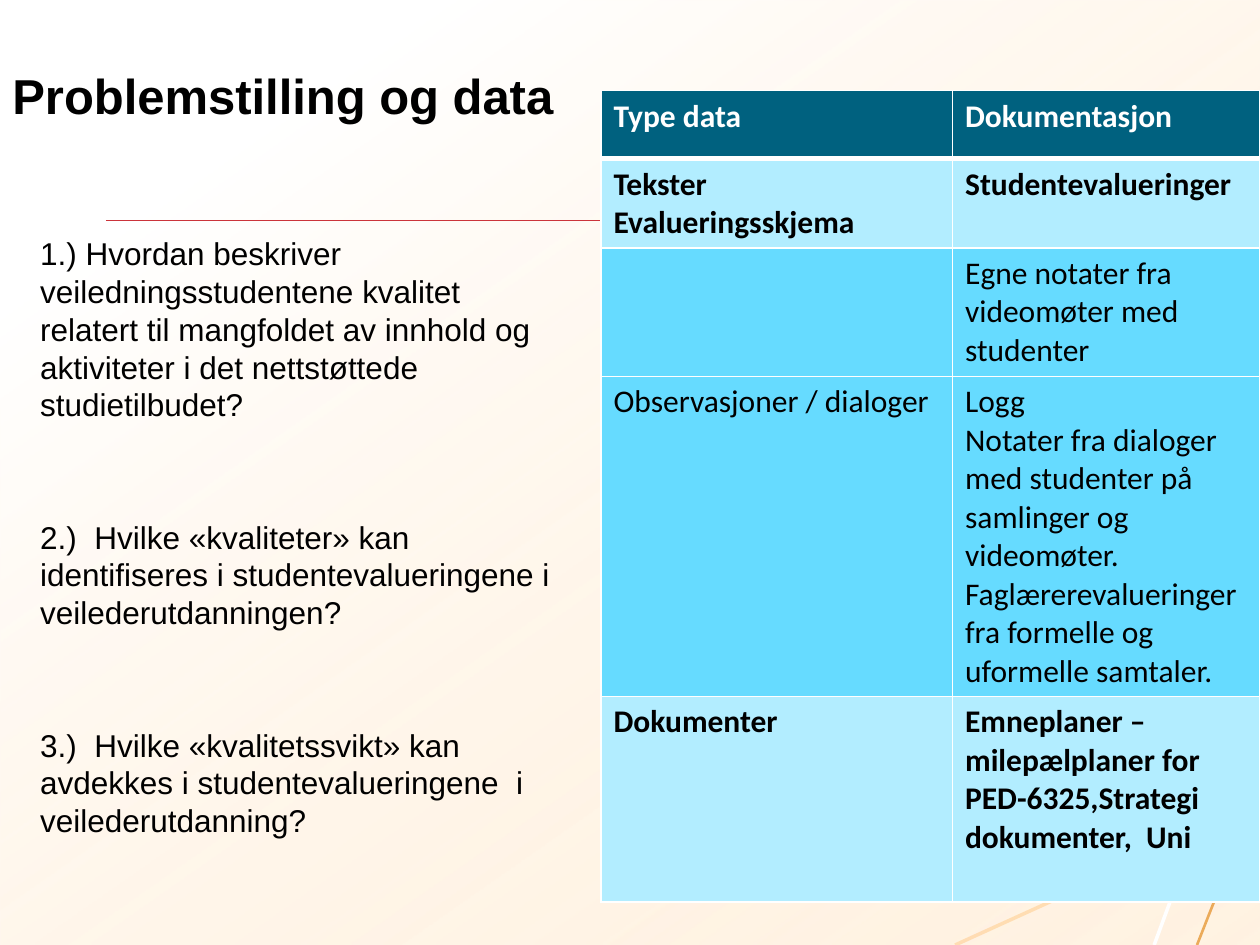
from lxml.etree import SubElement
from pptx import Presentation
from pptx.dml.color import RGBColor
from pptx.enum.shapes import MSO_CONNECTOR as Connector, MSO_SHAPE as Shape
from pptx.enum.text import MSO_ANCHOR as Anchor
from pptx.oxml import parse_xml
from pptx.oxml.ns import nsdecls, qn
from pptx.util import Inches, Pt

COLORS = {
    "white": "FFFFFF", "black": "000000", "cream": "FFE6C5", "peach": "FFCC8C",
    "orange": "DE7C00", "red": "CB343B", "header": "00617F",
    "light": "B2EDFF", "medium": "66DBFF",
}
COLUMNS, ROWS = 100, 75  # grid cells across and down the slide


def color(name):
    return RGBColor.from_string(COLORS[name])


def set_alpha(parent, percent):
    for element in parent.iter(qn("a:srgbClr")):
        SubElement(element, qn("a:alpha"), val=str(percent * 1000))


class SlideBuilder:
    text_size = 18
    body_font = "Arial"
    table_font = "Calibri"

    def __init__(self, presentation):
        self.width = presentation.slide_width
        self.height = presentation.slide_height
        self.slide = presentation.slides.add_slide(presentation.slide_layouts[6])
        self.shapes = self.slide.shapes

    def x(self, columns):
        return round(self.width * columns / COLUMNS)

    def y(self, rows):
        return round(self.height * rows / ROWS)

    def box(self, left, top, width, height):
        return self.x(left), self.y(top), self.x(width), self.y(height)

    def format_runs(self, paragraph, font_name, font_color, size, bold=False):
        for run in paragraph.runs:
            font = run.font
            font.name, font.size, font.bold = font_name, Pt(size), bold
            font.color.rgb = color(font_color)

    def background(self, start, end, end_alpha, angle):
        shape = self.shapes.add_shape(Shape.RECTANGLE, 0, 0, self.width, self.height)
        shape.shadow.inherit = False
        shape.line.fill.background()
        shape.fill.gradient()
        shape.fill.gradient_angle = 360 - angle
        for stop, (name, position) in zip(shape.fill.gradient_stops, (start, end)):
            stop.color.rgb = color(name)
            stop.position = position
        set_alpha(shape.element.spPr.findall(".//" + qn("a:gs"))[-1], end_alpha)

    def line(self, start, end, name, width, alpha=None):
        connector = self.shapes.add_connector(
            Connector.STRAIGHT, self.x(start[0]), self.y(start[1]),
            self.x(end[0]), self.y(end[1]))
        connector.line.color.rgb = color(name)
        connector.line.width = Pt(width)
        properties = connector.element.spPr
        if alpha:
            set_alpha(properties, alpha)
        SubElement(properties, qn("a:effectLst"))

    def text(self, area, paragraphs, size=text_size, bold=False,
             anchor=Anchor.TOP, gap=0, right_margin=1):
        frame = self.shapes.add_textbox(*self.box(*area)).text_frame
        frame.word_wrap = True
        frame.vertical_anchor = anchor
        frame.margin_right = self.x(right_margin)
        frame.text = "\n".join(paragraphs)
        for index, paragraph in enumerate(frame.paragraphs):
            paragraph.space_before = Pt(gap if index else 0)
            self.format_runs(paragraph, self.body_font, "black", size, bold)

    def borders(self, cell, top=1, bottom=1):
        properties = cell._tc.get_or_add_tcPr()
        widths = {"lnL": 1, "lnR": 1, "lnT": top, "lnB": bottom}
        for index, (tag, width) in enumerate(widths.items()):
            properties.insert(index, parse_xml(
                f'<a:{tag} {nsdecls("a")} w="{Pt(width)}"><a:solidFill>'
                f'<a:srgbClr val="{COLORS["white"]}"/></a:solidFill></a:{tag}>'))

    def table(self, left, top, column_widths, rows):
        area = self.box(left, top, sum(column_widths), sum(row[0] for row in rows))
        table = self.shapes.add_table(len(rows), len(column_widths), *area).table
        table.horz_banding = False
        for column, width in zip(table.columns, column_widths):
            column.width = self.x(width)
        for index, (height, fill, font_color, bold, texts) in enumerate(rows):
            table.rows[index].height = self.y(height)
            for cell, content in zip(table.rows[index].cells, texts):
                cell.fill.solid()
                cell.fill.fore_color.rgb = color(fill)
                self.borders(cell, top=3 if index == 1 else 1,
                             bottom=3 if index == 0 else 1)
                cell.text = content
                for paragraph in cell.text_frame.paragraphs:
                    self.format_runs(paragraph, self.table_font, font_color,
                                     self.text_size, bold)


QUESTIONS = [
    "1.) Hvordan beskriver veiledningsstudentene kvalitet relatert til mangfoldet "
    "av innhold og aktiviteter i det nettstøttede studietilbudet?",
    "2.)  Hvilke «kvaliteter» kan identifiseres i studentevalueringene i "
    "veilederutdanningen?",
    "3.)  Hvilke «kvalitetssvikt» kan avdekkes i studentevalueringene  i "
    "veilederutdanning?",
]

# Row height, fill, text colour, bold, cell texts
DATA_ROWS = [
    (5.4, "header", "white", True, ("Type data", "Dokumentasjon")),
    (7.1, "light", "black", True,
     ("Tekster Evalueringsskjema", "Studentevalueringer")),
    (10.2, "medium", "black", False,
     ("", "Egne notater fra videomøter med studenter")),
    (25.4, "medium", "black", False,
     ("Observasjoner / dialoger",
      "Logg\nNotater fra dialoger med studenter på samlinger og videomøter. "
      "Faglærerevalueringer fra formelle og uformelle samtaler.")),
    (16.3, "light", "black", True,
     ("Dokumenter",
      "Emneplaner – milepælplaner for PED-6325,Strategi dokumenter,  Uni")),
]


def main():
    presentation = Presentation()
    presentation.slide_width, presentation.slide_height = Inches(10), Inches(7.5)
    builder = SlideBuilder(presentation)

    # Background and corner lines
    builder.background(("white", 0.17), ("cream", 1), end_alpha=49, angle=55)
    builder.line((100, 52.2), (91.6, 75), "white", 2)
    builder.line((100, 64), (75.8, 75), "peach", 2, alpha=54)
    builder.line((100, 62.3), (95, 75), "orange", 1.5, alpha=60)

    # Title with rule
    builder.line((8.4, 17.5), (93.6, 17.5), "red", 1)
    builder.text((0, 0, 52.8, 10.4), ["Problemstilling og data"], size=28,
                 bold=True, anchor=Anchor.BOTTOM)

    # Research questions
    builder.text((2.2, 18.1, 43.8, 56), QUESTIONS, gap=54, right_margin=2)

    # Data overview
    builder.table(47.7, 7.2, (27.9, 24.4), DATA_ROWS)

    presentation.save("out.pptx")


if __name__ == "__main__":
    main()
